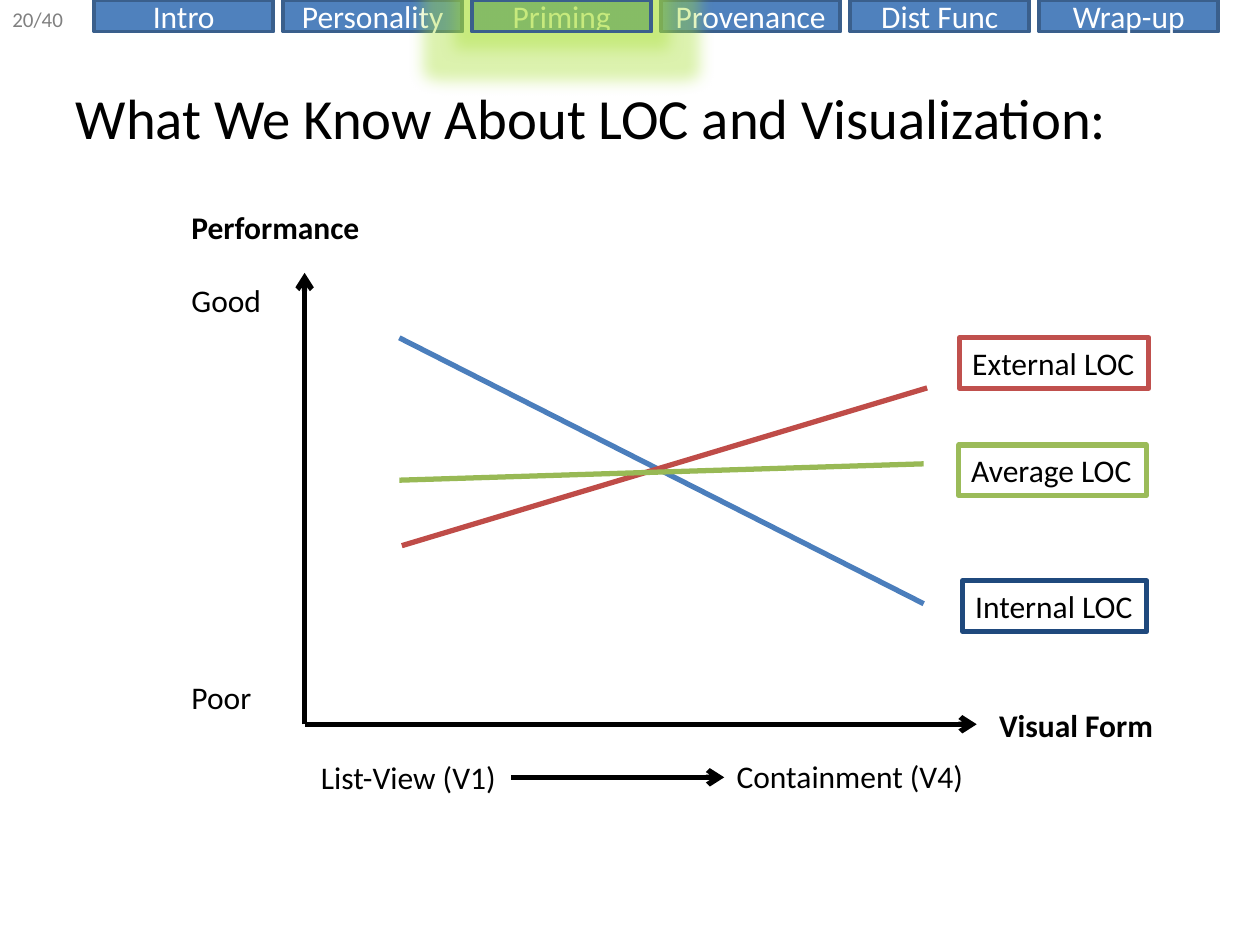
from lxml.etree import SubElement
from pptx import Presentation
from pptx.dml.color import RGBColor
from pptx.enum.shapes import MSO_CONNECTOR, MSO_SHAPE
from pptx.enum.text import MSO_ANCHOR, MSO_AUTO_SIZE, PP_ALIGN
from pptx.oxml.ns import qn
from pptx.util import Cm, Pt

BLACK = RGBColor(0x00, 0x00, 0x00)
WHITE = RGBColor(0xFF, 0xFF, 0xFF)
GRAY = RGBColor(0x80, 0x80, 0x80)
TAB_FILL = RGBColor(0x4F, 0x81, 0xBD)
TAB_LINE = RGBColor(0x3A, 0x5F, 0x8C)
GLOW = RGBColor(0xA8, 0xE0, 0x34)
INTERNAL_LINE = RGBColor(0x4B, 0x7E, 0xBC)
INTERNAL_BOX = RGBColor(0x1F, 0x49, 0x7D)
EXTERNAL_LINE = RGBColor(0xBF, 0x4C, 0x48)
EXTERNAL_BOX = RGBColor(0xC0, 0x50, 0x4D)
AVERAGE_LINE = RGBColor(0x98, 0xB9, 0x55)
AVERAGE_BOX = RGBColor(0x9B, 0xBB, 0x59)

TABS = ["Intro", "Personality", "Priming", "Provenance", "Dist Func", "Wrap-up"]
TAB_LEFT, TAB_STEP, TAB_WIDTH, TAB_HEIGHT = 1.9, 3.81, 3.61, 0.64
LABEL_HEIGHT = 1.02


class SlideBuilder:
    """Holds the text style and the current slide."""

    style = {"name": "Calibri", "size": Pt(18), "bold": False}

    def __init__(self, slide):
        self.s = slide

    def add_text(self, tf, text, color=BLACK, align=PP_ALIGN.LEFT, **changes):
        p = tf.paragraphs[0]
        p.alignment = align
        r = p.add_run()
        r.text = text
        for key, value in {**self.style, **changes}.items():
            setattr(r.font, key, value)
        r.font.color.rgb = color

    def title(self, text, left, top, width, height):
        sp = self.s.shapes.title
        place = {"left": left, "top": top, "width": width, "height": height}
        for key, value in place.items():
            setattr(sp, key, Cm(value))
        tf = sp.text_frame
        tf.auto_size = MSO_AUTO_SIZE.NONE
        tf.vertical_anchor = MSO_ANCHOR.MIDDLE
        self.add_text(tf, text, size=Pt(32.4))

    def label(self, text, left, top, width, height=LABEL_HEIGHT, border=None, **font):
        sp = self.s.shapes.add_textbox(Cm(left), Cm(top), Cm(width), Cm(height))
        tf = sp.text_frame
        tf.word_wrap = False
        tf.auto_size = MSO_AUTO_SIZE.SHAPE_TO_FIT_TEXT
        self.add_text(tf, text, **font)
        if border is not None:
            sp.line.color.rgb = border
            sp.line.width = Pt(3)

    def rect(self, left, top, width, height, fill=None):
        sp = self.s.shapes.add_shape(
            MSO_SHAPE.RECTANGLE, Cm(left), Cm(top), Cm(width), Cm(height))
        sp.shadow.inherit = False
        if fill is None:
            sp.fill.background()
        else:
            sp.fill.solid()
            sp.fill.fore_color.rgb = fill
        sp.line.color.rgb = TAB_LINE
        sp.line.width = Pt(2)
        return sp

    def tab(self, index, text):
        sp = self.rect(TAB_LEFT + index * TAB_STEP, 0, TAB_WIDTH, TAB_HEIGHT, TAB_FILL)
        sp.text_frame.vertical_anchor = MSO_ANCHOR.MIDDLE
        self.add_text(sp.text_frame, text, WHITE, PP_ALIGN.CENTER)

    def highlight(self, index):
        sp = self.rect(TAB_LEFT + index * TAB_STEP, 0, TAB_WIDTH, TAB_HEIGHT)
        effects = sp._element.spPr.find(qn("a:effectLst"))
        glow = SubElement(effects, qn("a:glow"), rad=str(Pt(18)))
        color = SubElement(glow, qn("a:srgbClr"), val=str(GLOW))
        SubElement(color, qn("a:alpha"), val="40000")

    def line(self, x1, y1, x2, y2, color=BLACK, arrow=False):
        cxn = self.s.shapes.add_connector(
            MSO_CONNECTOR.STRAIGHT, Cm(x1), Cm(y1), Cm(x2), Cm(y2))
        cxn.line.color.rgb = color
        cxn.line.width = Pt(3)
        sp_pr = cxn._element.spPr
        if arrow:
            SubElement(sp_pr.find(qn("a:ln")), qn("a:tailEnd"), type="arrow")
        SubElement(sp_pr, qn("a:effectLst"))


def main():
    prs = Presentation()
    prs.slide_width, prs.slide_height = Cm(25.4), Cm(19.05)
    b = SlideBuilder(prs.slides.add_slide(prs.slide_layouts[5]))

    # Navigation bar and page count
    for i, name in enumerate(TABS):
        b.tab(i, name)
    b.label("20/40", 0, 0, 1.63, 0.76, color=GRAY, size=Pt(12))

    b.title("What We Know About LOC and Visualization:", 1.27, 0.76, 22.86, 3.18)

    # Axes and the arrow between the two visual forms
    for ends in [(6.14, 14.6, 6.14, 5.5),
                 (6.14, 14.6, 19.69, 14.6),
                 (10.31, 15.67, 14.6, 15.67)]:
        b.line(*ends, arrow=True)

    # Axis labels
    b.label("Performance", 3.61, 4.06, 3.94, bold=True)
    b.label("Good", 3.61, 5.54, 1.93)
    b.label("Poor", 3.61, 13.54, 1.73)
    b.label("Visual Form", 19.89, 14.1, 3.63, bold=True)
    b.label("List-View (V1)", 6.22, 15.16, 4.09)
    b.label("Containment (V4)", 14.6, 15.14, 5.28)

    # Trend lines with their framed labels
    trends = [
        ("Internal LOC", (8.05, 6.81, 18.62, 12.17), INTERNAL_LINE,
         (19.41, 11.71, 3.71), INTERNAL_BOX),
        ("External LOC", (8.1, 11, 18.69, 7.82), EXTERNAL_LINE,
         (19.35, 6.81, 3.81), EXTERNAL_BOX),
        ("Average LOC", (8.05, 9.68, 18.62, 9.35), AVERAGE_LINE,
         (19.33, 8.97, 3.78), AVERAGE_BOX),
    ]
    for text, ends, line_color, place, box_color in trends:
        b.line(*ends, color=line_color)
        b.label(text, *place, border=box_color)

    # Glow around the current section
    b.highlight(TABS.index("Priming"))

    prs.save("out.pptx")


if __name__ == "__main__":
    main()
